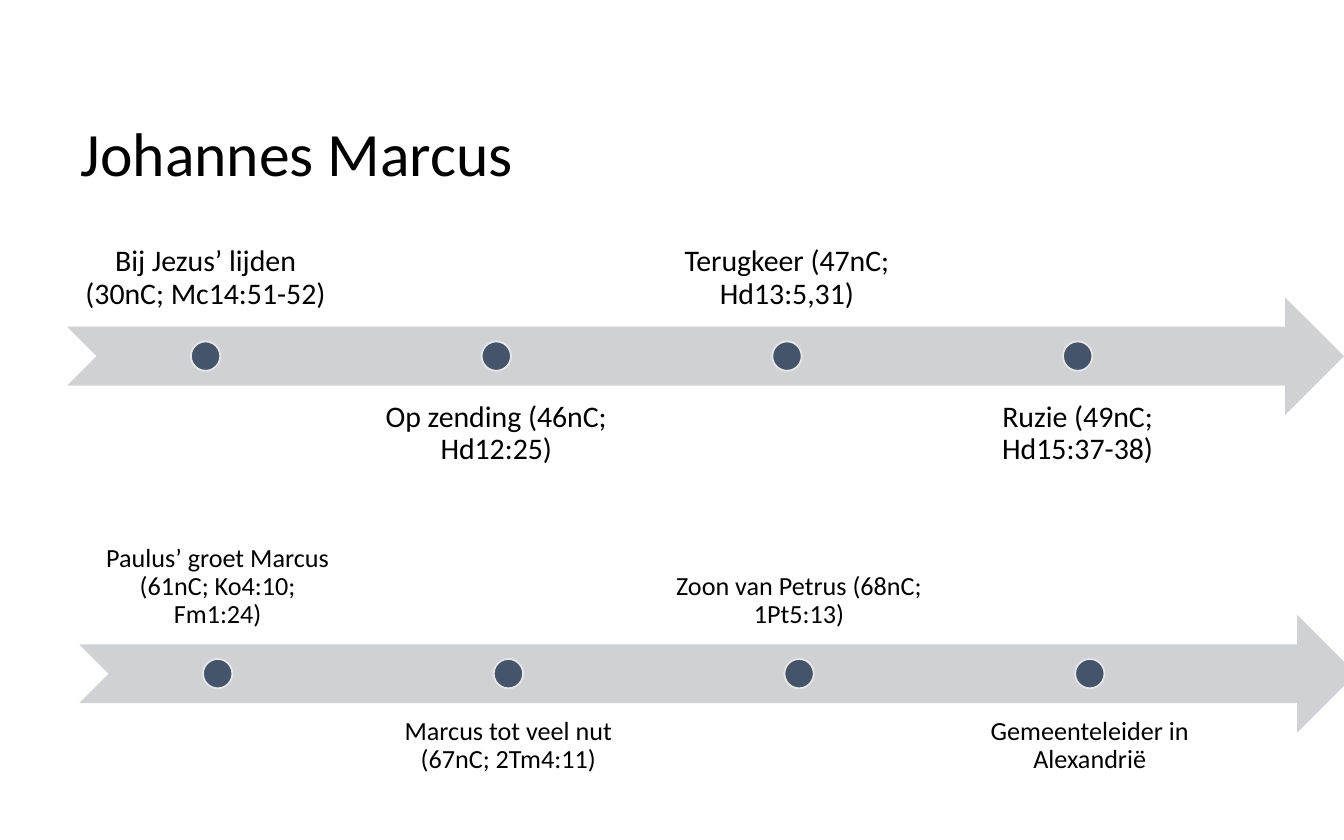
"""Build a slide with two timelines of the life of Johannes Marcus."""
from dataclasses import dataclass

from pptx import Presentation
from pptx.dml.color import RGBColor
from pptx.enum.shapes import MSO_SHAPE as Preset
from pptx.enum.text import MSO_ANCHOR as Anchor, PP_ALIGN as Align
from pptx.shapes.autoshape import Shape
from pptx.shapes.group import GroupShape
from pptx.text.text import TextFrame
from pptx.util import Inches, Pt

WIDTH, HEIGHT = 10, 6.25
BAND = 0.14 * HEIGHT
ARROW_WIDTH = 0.95 * WIDTH
LABEL_WIDTH = 0.206 * WIDTH
PITCH = 1.05 * LABEL_WIDTH
LABEL_SHIFT = 0.75 * BAND
DOT = BAND / 4


@dataclass(frozen=True)
class Timeline:
    left: float
    top: float
    size: int
    margin: float
    events: tuple[str, ...]


TIMELINES = (
    Timeline(0.05 * WIDTH, 0.354 * HEIGHT, 16, 0.12, (
        "Bij Jezus’ lijden (30nC; Mc14:51-52)",
        "Op zending (46nC; Hd12:25)",
        "Terugkeer (47nC; Hd13:5,31)",
        "Ruzie (49nC; Hd15:37-38)",
    )),
    Timeline(0.059 * WIDTH, 0.732 * HEIGHT, 14, 0.11, (
        "Paulus’ groet Marcus (61nC; Ko4:10; Fm1:24)",
        "Marcus tot veel nut (67nC; 2Tm4:11)",
        "Zoon van Petrus (68nC; 1Pt5:13)",
        "Gemeenteleider in Alexandrië",
    )),
)


def color(value: str) -> RGBColor:
    return RGBColor.from_string(value)


def write(frame: TextFrame, text: str, *, size: int, align: Align = Align.LEFT,
          anchor: Anchor = Anchor.TOP, margin: float | None = None) -> None:
    frame.word_wrap = True
    frame.vertical_anchor = anchor
    if margin is not None:
        frame.margin_left = frame.margin_right = Inches(margin)
        frame.margin_top = frame.margin_bottom = Inches(margin)
    paragraph = frame.paragraphs[0]
    paragraph.alignment = align
    paragraph.line_spacing = 0.9
    run = paragraph.add_run()
    run.text = text
    run.font.name = "Calibri"
    run.font.size = Pt(size)
    run.font.color.rgb = color("000000")


def add_preset(group: GroupShape, preset: Preset, left: float, top: float,
               width: float, height: float, fill: str, line: str | None = None) -> Shape:
    shape = group.shapes.add_shape(
        preset, Inches(left), Inches(top), Inches(width), Inches(height))
    shape.shadow.inherit = False
    shape.fill.solid()
    shape.fill.fore_color.rgb = color(fill)
    if line:
        shape.line.color.rgb = color(line)
        shape.line.width = Pt(1)
    else:
        shape.line.fill.background()
    return shape


def add_timeline(group: GroupShape, timeline: Timeline) -> None:
    add_preset(group, Preset.NOTCHED_RIGHT_ARROW, timeline.left, timeline.top,
               ARROW_WIDTH, BAND, "CFD1D4")
    for index, event in enumerate(timeline.events):
        above = index % 2 == 0
        left = timeline.left + index * PITCH
        top = timeline.top + (-LABEL_SHIFT if above else LABEL_SHIFT)
        label = group.shapes.add_textbox(
            Inches(left), Inches(top), Inches(LABEL_WIDTH), Inches(BAND))
        write(label.text_frame, event, size=timeline.size, align=Align.CENTER,
              anchor=Anchor.BOTTOM if above else Anchor.TOP, margin=timeline.margin)
        add_preset(group, Preset.OVAL, left + (LABEL_WIDTH - DOT) / 2,
                   timeline.top + (BAND - DOT) / 2, DOT, DOT, "44546A", "E7E6E6")


def main() -> None:
    presentation = Presentation()
    presentation.slide_width = Inches(WIDTH)
    presentation.slide_height = Inches(HEIGHT)
    slide = presentation.slides.add_slide(presentation.slide_layouts[5])
    title = slide.shapes.title
    title.left, title.top = Inches(0.05 * WIDTH), Inches(0.109 * HEIGHT)
    title.width, title.height = Inches(0.9 * WIDTH), Inches(0.155 * HEIGHT)
    write(title.text_frame, "Johannes Marcus", size=33, anchor=Anchor.MIDDLE)
    for timeline in TIMELINES:
        add_timeline(slide.shapes.add_group_shape(), timeline)
    presentation.save("out.pptx")


if __name__ == "__main__":
    main()
